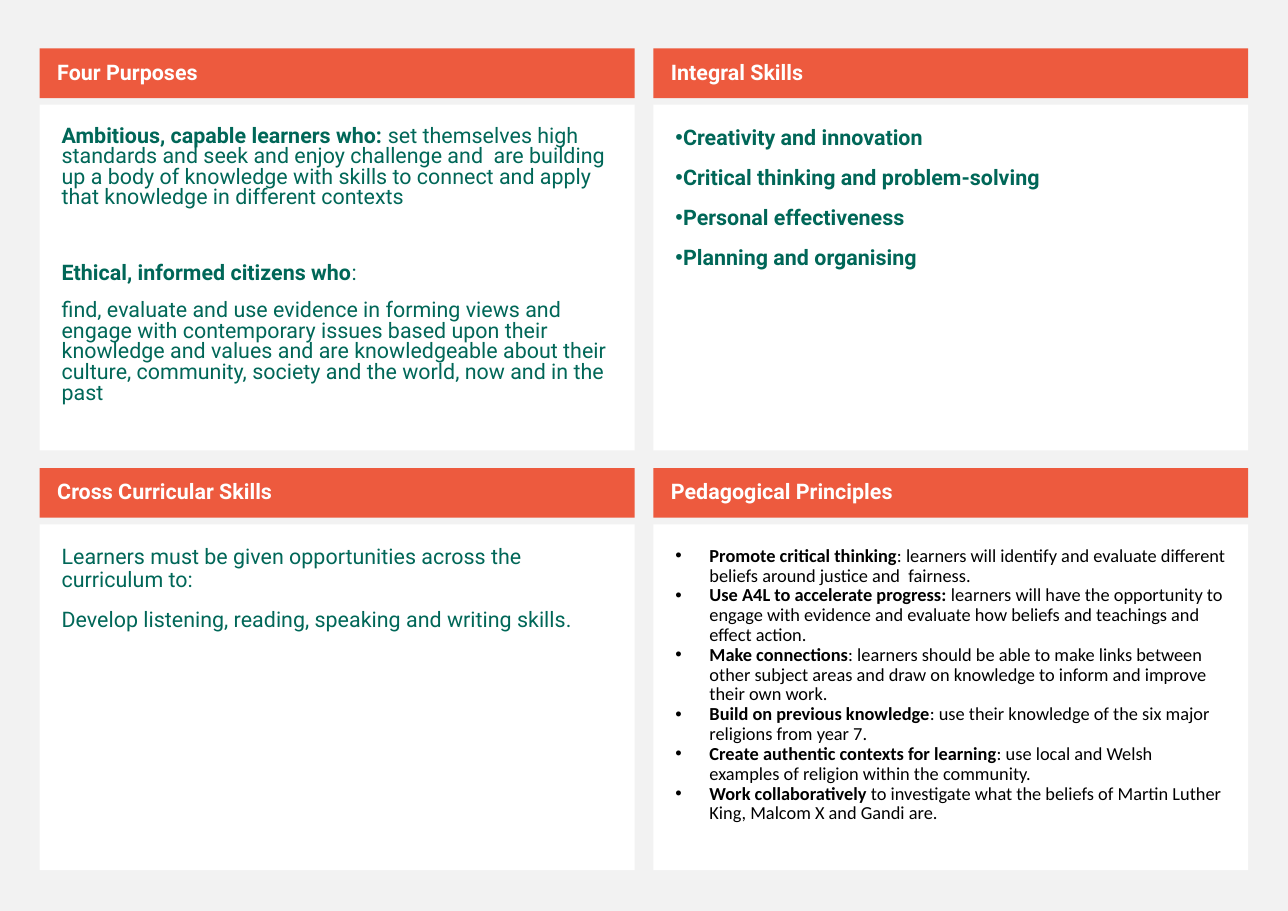
from dataclasses import dataclass

from lxml import etree
from pptx import Presentation
from pptx.dml.color import RGBColor
from pptx.enum.shapes import MSO_SHAPE
from pptx.enum.text import MSO_ANCHOR, PP_ALIGN
from pptx.oxml.ns import qn
from pptx.util import Emu, Pt

RECTANGLE = MSO_SHAPE.RECTANGLE
TOP, MIDDLE = MSO_ANCHOR.TOP, MSO_ANCHOR.MIDDLE
LEFT = PP_ALIGN.LEFT

EMU_PER_PX = 9144
SLIDE_WIDTH, SLIDE_HEIGHT = 1169, 827
PANEL_LEFT, PANEL_TOP = 36, 44
COLUMN_PITCH, ROW_PITCH = 557, 381
PANEL_WIDTH, HEADER_HEIGHT = 540, 45
BODY_OFFSET, BODY_HEIGHT = 51, 314
HEADER_INSETS = (16, 5, 10, 5)
BODY_INSETS = (20, 20, 20, 20)


@dataclass(frozen=True)
class Theme:
    background: str = "F2F2F2"
    header: str = "ED5A3E"
    panel: str = "FFFFFF"
    header_text: str = "FFFFFF"
    green: str = "006758"
    black: str = "000000"
    main_font: str = "Roboto"
    detail_font: str = "Calibri"
    bullet_font: str = "Arial"
    main_size: int = 14
    detail_size: int = 12


@dataclass(frozen=True)
class TextStyle:
    font: str
    size: int
    color: str
    line_spacing: float = 0.9
    space_before: int = 11
    hanging: int = 0


@dataclass(frozen=True)
class Entry:
    bold: str = ""
    plain: str = ""
    space_before: int | None = None


def px(value):
    return Emu(value * EMU_PER_PX)


class Board:
    def __init__(self, slide, theme):
        self.slide = slide
        self.theme = theme

    def background(self):
        fill = self.slide.background.fill
        fill.solid()
        fill.fore_color.rgb = RGBColor.from_string(self.theme.background)

    def box(self, left, top, height, color, insets, anchor):
        shape = self.slide.shapes.add_shape(
            RECTANGLE, px(left), px(top), px(PANEL_WIDTH), px(height))
        shape.shadow.inherit = False
        shape.fill.solid()
        shape.fill.fore_color.rgb = RGBColor.from_string(color)
        shape.line.fill.background()
        frame = shape.text_frame
        frame.word_wrap = True
        frame.vertical_anchor = anchor
        (frame.margin_left, frame.margin_top,
         frame.margin_right, frame.margin_bottom) = map(px, insets)
        return frame

    def bullet(self, paragraph, hanging):
        properties = paragraph._p.get_or_add_pPr()
        properties.set("marL", str(px(hanging)))
        properties.set("indent", str(px(-hanging)))
        etree.SubElement(properties, qn("a:buFont"), typeface=self.theme.bullet_font)
        etree.SubElement(properties, qn("a:buChar"), char="•")

    def text(self, frame, entries, style):
        for index, entry in enumerate(entries):
            paragraph = frame.add_paragraph() if index else frame.paragraphs[0]
            if style.hanging:
                self.bullet(paragraph, style.hanging)
            paragraph.alignment = LEFT
            paragraph.line_spacing = style.line_spacing
            before = style.space_before if entry.space_before is None else entry.space_before
            paragraph.space_before = Pt(before)
            font = paragraph.font
            font.name = style.font
            font.size = Pt(style.size)
            font.color.rgb = RGBColor.from_string(style.color)
            mixed = bool(entry.bold and entry.plain)
            if not mixed:
                font.bold = bool(entry.bold)
            for words, bold in ((entry.bold, True), (entry.plain, False)):
                if words:
                    run = paragraph.add_run()
                    run.text = words
                    if mixed:
                        run.font.bold = bold

    def panel(self, column, row, title, entries, style):
        theme = self.theme
        left = PANEL_LEFT + column * COLUMN_PITCH
        top = PANEL_TOP + row * ROW_PITCH
        body = self.box(left, top + BODY_OFFSET, BODY_HEIGHT, theme.panel, BODY_INSETS, TOP)
        self.text(body, entries, style)
        header = self.box(left, top, HEADER_HEIGHT, theme.header, HEADER_INSETS, MIDDLE)
        self.text(header, [Entry(bold=title)],
                  TextStyle(theme.main_font, theme.main_size, theme.header_text))


PURPOSES = [
    Entry("Ambitious, capable learners who: ",
          "set themselves high standards and seek and enjoy challenge and  are "
          "building up a body of knowledge with skills to connect and apply that "
          "knowledge in different contexts"),
    Entry("Ethical, informed citizens who", ":", space_before=36),
    Entry(plain="find, evaluate and use evidence in forming views and engage with "
                "contemporary issues based upon their knowledge and values and are "
                "knowledgeable about their culture, community, society and the world, "
                "now and in the past"),
]
INTEGRAL_SKILLS = [Entry(bold=skill) for skill in (
    "Creativity and innovation",
    "Critical thinking and problem-solving",
    "Personal effectiveness",
    "Planning and organising",
)]
CROSS_CURRICULAR = [
    Entry(plain="Learners must be given opportunities across the curriculum to:"),
    Entry(plain="Develop listening, reading, speaking and writing skills."),
]
PRINCIPLES = [
    Entry("Promote critical thinking",
          ": learners will identify and evaluate different beliefs around justice "
          "and  fairness."),
    Entry("Use A4L to accelerate progress: ",
          "learners will have the opportunity to engage with evidence and evaluate "
          "how beliefs and teachings and effect action."),
    Entry("Make connections",
          ": learners should be able to make links between other subject areas and "
          "draw on knowledge to inform and improve their own work."),
    Entry("Build on previous knowledge",
          ": use their knowledge of the six major religions from year 7."),
    Entry("Create authentic contexts for learning",
          ": use local and Welsh examples of religion within the community."),
    Entry("Work collaboratively ",
          "to investigate what the beliefs of Martin Luther King, Malcom X and "
          "Gandi are."),
]


def main():
    presentation = Presentation()
    presentation.slide_width = px(SLIDE_WIDTH)
    presentation.slide_height = px(SLIDE_HEIGHT)
    slide = presentation.slides.add_slide(presentation.slide_layouts[6])
    theme = Theme()
    board = Board(slide, theme)
    main_text = (theme.main_font, theme.main_size, theme.green)
    detail_text = (theme.detail_font, theme.detail_size, theme.black)

    board.background()
    board.panel(0, 0, "Four Purposes", PURPOSES, TextStyle(*main_text, line_spacing=0.8))
    board.panel(1, 0, "Integral Skills", INTEGRAL_SKILLS, TextStyle(*main_text, hanging=7))
    board.panel(0, 1, "Cross Curricular Skills", CROSS_CURRICULAR, TextStyle(*main_text))
    board.panel(1, 1, "Pedagogical Principles", PRINCIPLES,
                TextStyle(*detail_text, space_before=0, hanging=31))
    presentation.save("out.pptx")


if __name__ == "__main__":
    main()
